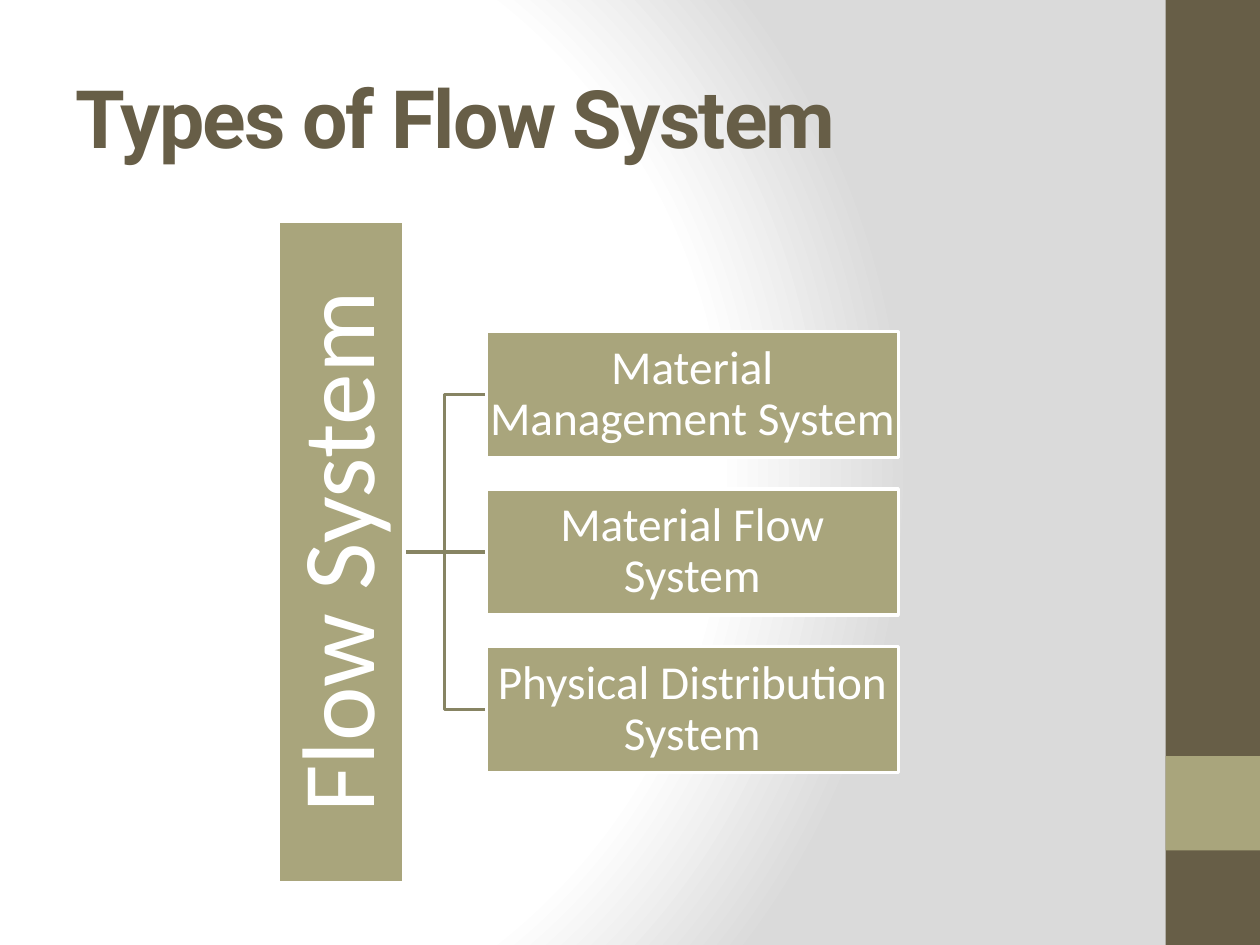
from lxml import etree
from pptx import Presentation
from pptx import util as u
from pptx.dml import color
from pptx.enum import shapes, text
from pptx.oxml import parse_xml
from pptx.oxml.ns import nsdecls, qn

Inches, Pt = u.Inches, u.Pt
BROWN, KHAKI, OLIVE, WHITE = "675E47", "A9A57C", "878463", "FFFFFF"


def paint(fill, value):
    fill.solid()
    fill.fore_color.rgb = color.RGBColor.from_string(value)


def add_box(left, top, width, height, fill, label="", size=27, inset=0.02):
    box = slide.shapes.add_shape(shapes.MSO_SHAPE.RECTANGLE, Inches(left), Inches(top),
                                 Inches(width), Inches(height))
    box.shadow.inherit = False
    paint(box.fill, fill)
    if not label:
        box.line.fill.background()
        return box
    paint(box.line.fill, WHITE)
    box.line.width = Pt(2)
    frame = box.text_frame
    frame.text = label
    frame.word_wrap = True
    frame.vertical_anchor = text.MSO_ANCHOR.MIDDLE
    frame.margin_left = frame.margin_right = Inches(inset)
    frame.margin_top = frame.margin_bottom = Inches(inset)
    para = frame.paragraphs[0]
    para.alignment = text.PP_ALIGN.CENTER
    para.line_spacing = 0.9
    span = para.runs[0]
    span.font.name = "Calibri"
    span.font.size = Pt(size)
    paint(span.font.fill, WHITE)
    return box


deck = Presentation()
deck.slide_width, deck.slide_height = Inches(10), Inches(7.5)
slide = deck.slides.add_slide(deck.slide_layouts[5])

paint(slide.background.fill, WHITE)
plain = next(slide.element.iter(qn("a:solidFill")))
stops = "".join(f'<a:gs pos="{place}000"><a:srgbClr val="{value}"/></a:gs>'
                for place, value in [(0, WHITE), (75, WHITE), (100, "DADADA")])
plain.getparent().replace(plain, parse_xml(
    f'<a:gradFill {nsdecls("a")} rotWithShape="1"><a:gsLst>{stops}</a:gsLst>'
    '<a:path path="circle"><a:fillToRect l="20000" t="50000" r="100000" b="50000"/></a:path>'
    '</a:gradFill>'))

add_box(9.25, 0, 0.75, 7.5, BROWN)
add_box(9.25, 6, 0.75, 0.75, KHAKI)

title = slide.shapes.title
title.left, title.top, title.width, title.height = map(Inches, (0.5, 0.3, 8.33, 1.25))
title.text_frame.text = "Types of Flow System"
title.text_frame.vertical_anchor = text.MSO_ANCHOR.MIDDLE
heading = title.text_frame.paragraphs[0]
heading.alignment = text.PP_ALIGN.LEFT
span = heading.runs[0]
span.font.name = "Roboto"
span.font.size = Pt(46)
span.font.bold = True
paint(span.font.fill, BROWN)
span.font._element.set("spc", "-100")

root = add_box(0.08, 3.88, 5.25, 1, KHAKI, "Flow System", 59, 0.04)
root.rotation = 270

systems = ["Material Management System", "Material Flow System", "Physical Distribution System"]
for row, name in enumerate(systems):
    box = add_box(3.86, 2.63 + 1.25 * row, 3.27, 1, KHAKI, name)
    kind = shapes.MSO_CONNECTOR.STRAIGHT if row == 1 else shapes.MSO_CONNECTOR.ELBOW
    link = slide.shapes.add_connector(kind, 0, 0, 0, 0)
    link.begin_connect(root, 2)
    link.begin_x, link.begin_y = Inches(3.2), Inches(4.38)
    link.end_connect(box, 1)
    paint(link.line.fill, OLIVE)
    link.line.width = Pt(2)
    etree.SubElement(link._element.spPr, qn("a:effectLst"))
    root._element.addprevious(link._element)

deck.save("out.pptx")
